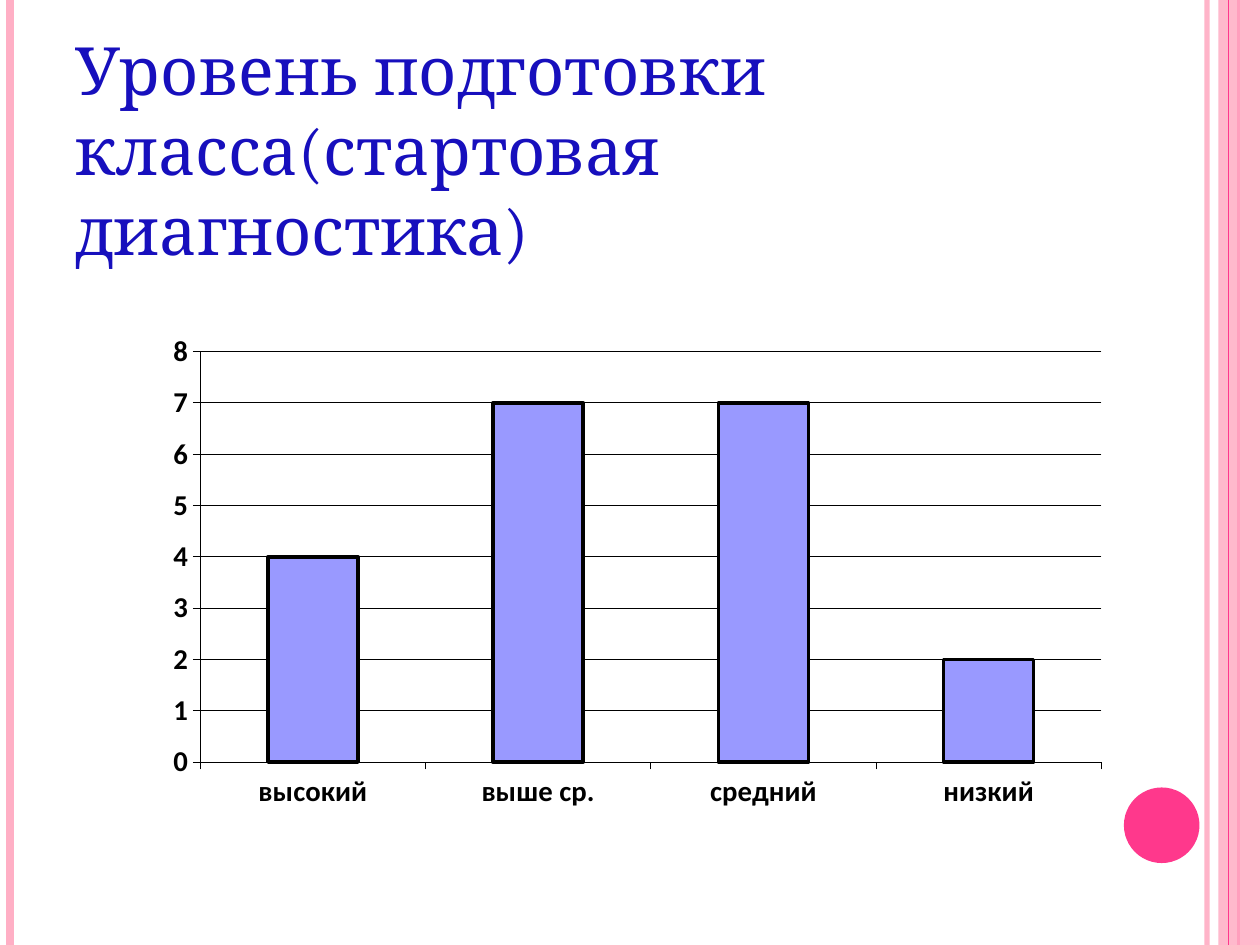
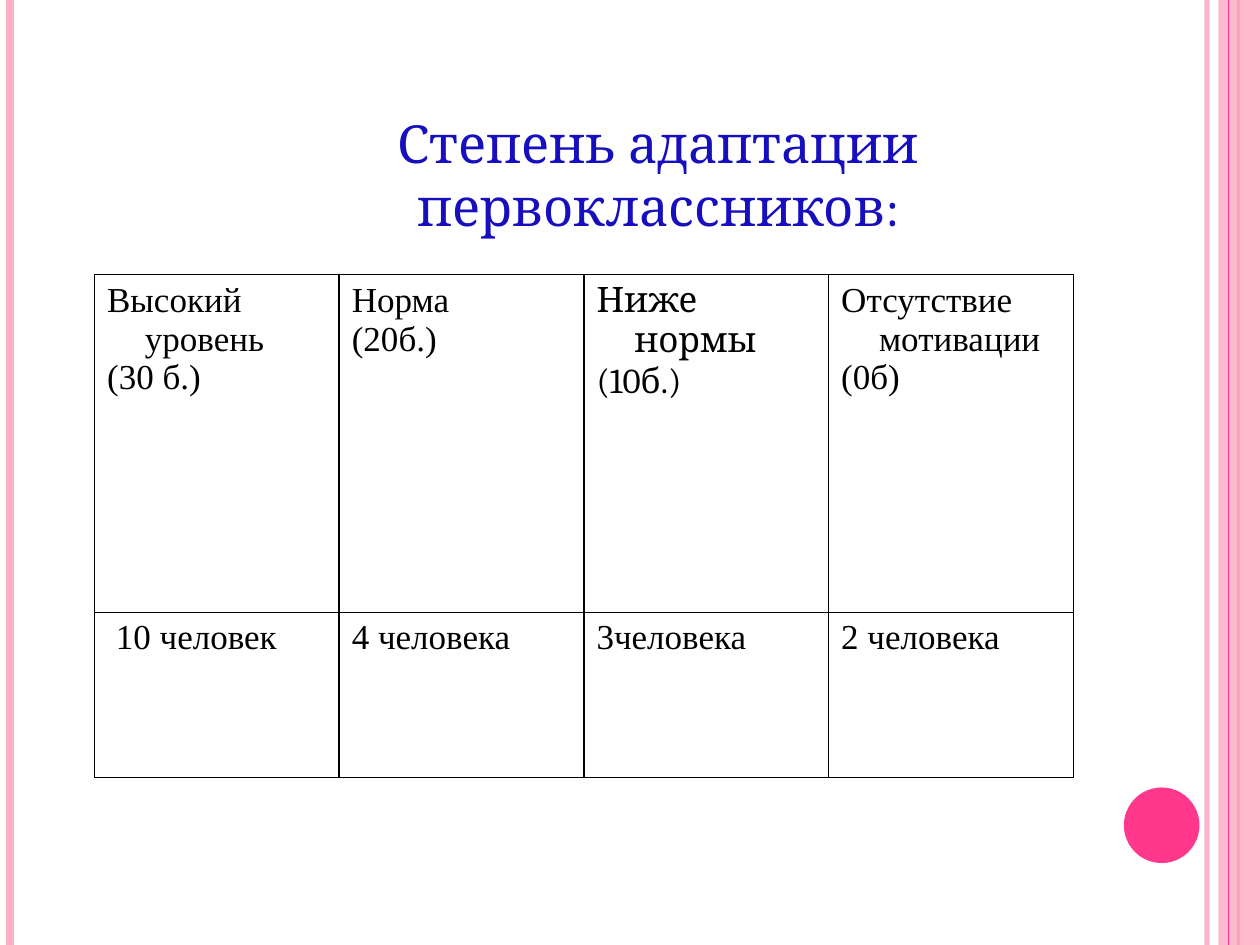
from dataclasses import dataclass

from lxml import etree
from pptx import Presentation
from pptx.chart.data import CategoryChartData
from pptx.dml.color import RGBColor
from pptx.enum.chart import XL_CHART_TYPE, XL_TICK_LABEL_POSITION, XL_TICK_MARK
from pptx.enum.shapes import MSO_CONNECTOR, MSO_SHAPE
from pptx.enum.text import MSO_ANCHOR, PP_ALIGN
from pptx.oxml import parse_xml
from pptx.oxml.ns import nsdecls, qn
from pptx.util import Inches, Pt


@dataclass(frozen=True)
class Theme:
    pale: str = "FFAFC5"
    pink: str = "FF388C"
    blue: str = "170FBD"
    bar: str = "9999FF"
    ink: str = "000000"
    head: str = "Cambria"
    body: str = "Times New Roman"
    label: str = "Calibri"
    big: float = 38
    mid: float = 30
    cell: float = 20
    tick: float = 16.4


def tint(fill, color, alpha=100):
    fill.solid()
    fill.fore_color.rgb = RGBColor.from_string(color)
    if alpha < 100:
        node = fill._xPr.find(".//" + qn("a:srgbClr"))
        etree.SubElement(node, qn("a:alpha"), val=str(alpha * 1000))


def stroke(line, color, width, alpha=100):
    tint(line.fill, color, alpha)
    line.width = Pt(width)


def style(font, face, size, color, bold=False):
    font.name, font.size, font.bold = face, Pt(size), bold
    font.color.rgb = RGBColor.from_string(color)


def write(frame, text, face, size, color, align=PP_ALIGN.LEFT, hang=0):
    """Put one paragraph per line of text, with an optional hanging indent."""
    frame.word_wrap = True
    for i, part in enumerate(text.split("\n")):
        para = frame.paragraphs[0] if i == 0 else frame.add_paragraph()
        para.alignment = align
        run = para.add_run()
        run.text = part
        style(run.font, face, size, color)
        if hang:
            props = para._p.get_or_add_pPr()
            props.set("marL", str(Inches(hang)))
            props.set("indent", str(Inches(-hang)))


class Deck:
    def __init__(self, theme):
        self.theme = theme
        self.show = Presentation()
        self.show.slide_width, self.show.slide_height = Inches(10), Inches(7.5)
        self.slide = None

    def page(self):
        """Start a slide with the shared side bands and dot."""
        t = self.theme
        self.slide = self.show.slides.add_slide(self.show.slide_layouts[6])
        self.rule(9.58, t.pale, 3, 93)
        self.rule(0.08, t.pale, 4.5)
        self.rule(9.83, t.pink, 1.5)
        self.shape(MSO_SHAPE.RECTANGLE, (9.67, 0, 0.33, 7.5), t.pale, 87)
        self.rule(9.75, t.pink, 0.75)
        self.shape(MSO_SHAPE.OVAL, (8.92, 6.25, 0.6, 0.6), t.pink)

    def rule(self, x, color, width, alpha=100):
        line = self.slide.shapes.add_connector(
            MSO_CONNECTOR.STRAIGHT, Inches(x), 0, Inches(x), Inches(7.5))
        stroke(line.line, color, width, alpha)
        etree.SubElement(line._element.spPr, qn("a:effectLst"))

    def shape(self, kind, box, color, alpha=100):
        item = self.slide.shapes.add_shape(kind, *map(Inches, box))
        item.shadow.inherit = False
        tint(item.fill, color, alpha)
        item.line.fill.background()

    def title(self, text, box, size, align=PP_ALIGN.LEFT):
        frame = self.slide.shapes.add_textbox(*map(Inches, box)).text_frame
        frame.vertical_anchor = MSO_ANCHOR.BOTTOM
        write(frame, text, self.theme.head, size, self.theme.blue, align)

    def chart(self, box, plot, name, data):
        t = self.theme
        source = CategoryChartData()
        source.categories = list(data)
        source.add_series(name, list(data.values()))
        chart = self.slide.shapes.add_chart(
            XL_CHART_TYPE.COLUMN_CLUSTERED, *map(Inches, box), source).chart
        chart.has_title = chart.has_legend = False
        style(chart.font, t.label, t.tick, t.ink, True)

        # Bars
        bars = chart.plots[0]
        bars.gap_width, bars.vary_by_categories = 150, False
        tint(bars.series[0].format.fill, t.bar)
        stroke(bars.series[0].format.line, t.ink, 2.05)

        # Axes
        for axis in (chart.category_axis, chart.value_axis):
            axis.major_tick_mark = XL_TICK_MARK.OUTSIDE
            axis.minor_tick_mark = XL_TICK_MARK.NONE
            style(axis.tick_labels.font, t.label, t.tick, t.ink, True)
            stroke(axis.format.line, t.ink, 0.5)
        chart.category_axis.tick_label_position = XL_TICK_LABEL_POSITION.LOW
        axis = chart.value_axis
        axis.minimum_scale, axis.maximum_scale, axis.major_unit = 0, 8, 1
        axis.has_major_gridlines = True
        stroke(axis.major_gridlines.format.line, t.ink, 0.5)

        # Plot area
        area = chart._chartSpace.find(".//" + qn("c:plotArea"))
        for old in area.findall(qn("c:layout")):
            area.remove(old)
        modes = "".join(f'<c:{k}Mode val="edge"/>' for k in "xy")
        sides = "".join(f'<c:{k} val="{v}"/>' for k, v in zip("xywh", plot))
        area.insert(0, parse_xml(
            f'<c:layout {nsdecls("c")}><c:manualLayout>'
            f'<c:layoutTarget val="inner"/>{modes}{sides}'
            '</c:manualLayout></c:layout>'))

    def table(self, box, highs, rows, faces):
        t = self.theme
        table = self.slide.shapes.add_table(
            len(rows), len(rows[0]), *map(Inches, box)).table
        table.first_row = table.horz_banding = False
        for row, high in zip(table.rows, highs):
            row.height = Inches(high)
        for r, row in enumerate(rows):
            for c, text in enumerate(row):
                cell = table.cell(r, c)
                write(cell.text_frame, text, faces.get((r, c), t.body),
                      t.cell, t.ink, hang=0.3)
                self.frame(cell)

    def frame(self, cell):
        """Draw the four cell borders and clear the fill."""
        props = cell._tc.get_or_add_tcPr()
        for side in "LRTB":
            props.append(parse_xml(
                f'<a:ln{side} {nsdecls("a")} w="{Pt(1)}"><a:solidFill>'
                f'<a:srgbClr val="{self.theme.ink}"/></a:solidFill></a:ln{side}>'))
        cell.fill.background()


def main():
    theme = Theme()
    deck = Deck(theme)

    # Class level chart
    deck.page()
    deck.title("Уровень подготовки класса(стартовая диагностика)",
               (0.5, 0.3, 8.17, 1.88), theme.big)
    deck.chart((1.17, 2.42, 8.08, 4.22), (0.052, 0.088, 0.885, 0.772), "Series 1",
               {"высокий": 4, "выше ср.": 7, "средний": 7, "низкий": 2})

    # Adaptation table
    deck.page()
    deck.table(
        (0.75, 2.18, 7.77, 3.98), (2.68, 1.31),
        [["Высокий уровень\n(30 б.)", "Норма\n(20б.)",
          "Ниже нормы\n(10б.)", "Отсутствие мотивации\n(0б)"],
         [" 10 человек", "4 человека", "3человека", "2 человека"]],
        {(0, 2): theme.head})
    deck.title("Степень адаптации первоклассников:",
               (1.14, 0.68, 8.17, 1.25), theme.mid, PP_ALIGN.CENTER)

    deck.show.save("out.pptx")


if __name__ == "__main__":
    main()
